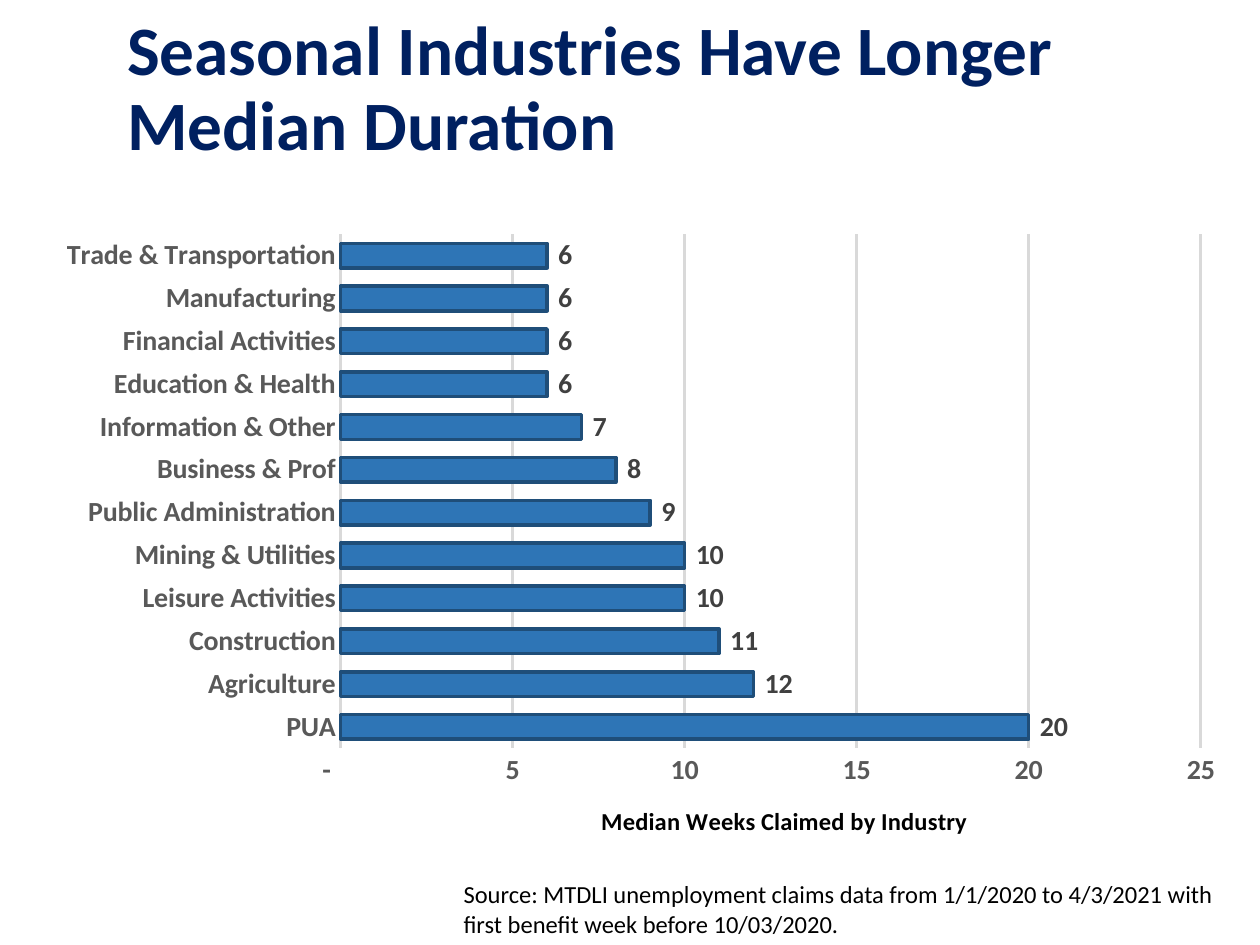
from lxml.etree import SubElement
from pptx import Presentation
from pptx.chart.data import CategoryChartData
from pptx.dml.color import RGBColor
from pptx.enum.chart import XL_CHART_TYPE, XL_LABEL_POSITION, XL_TICK_MARK
from pptx.enum.text import MSO_ANCHOR, PP_ALIGN
from pptx.oxml.ns import qn
from pptx.util import Pt

THEME = {
    "font": "Calibri",
    "title": {"size": 39.6, "color": "002060", "bold": True},
    "source": {"size": 14, "color": "000000", "bold": False},
    "axis": {"size": 16, "color": "595959", "bold": True},
    "axis_title": {"size": 14, "color": "000000", "bold": True},
    "label": {"size": 16, "color": "404040", "bold": True},
    "grid": "D9D9D9",
    "bar": "2E75B6",
    "bar_line": "1F4E79",
}
NUMBER_FORMAT = '_(* #,##0_);_(* \\(#,##0\\);_(* "-"??_);_('
WEEKS = {
    "PUA": 20,
    "Agriculture": 12,
    "Construction": 11,
    "Leisure Activities": 10,
    "Mining & Utilities": 10,
    "Public Administration": 9,
    "Business & Prof": 8,
    "Information & Other": 7,
    "Education & Health": 6,
    "Financial Activities": 6,
    "Manufacturing": 6,
    "Trade & Transportation": 6,
}


def style(font, role):
    look = THEME[role]
    for name, value in {"name": THEME["font"], "size": Pt(look["size"]),
                        "bold": look["bold"]}.items():
        setattr(font, name, value)
    font.color.rgb = RGBColor.from_string(look["color"])


def set_layout(parent, position, values):
    """Fix the place of a chart part, in fractions of the chart."""
    for old in parent.findall(qn("c:layout")):
        parent.remove(old)
    layout = SubElement(parent, qn("c:layout"))
    manual = SubElement(layout, qn("c:manualLayout"))
    for tag, value in values.items():
        SubElement(manual, qn(f"c:{tag}")).set("val", str(value))
    parent.insert(position, layout)


prs = Presentation()
prs.slide_width, prs.slide_height = Pt(720), Pt(540)
s = prs.slides.add_slide(prs.slide_layouts[5])

# Title
title = s.shapes.title
title.left, title.top, title.width, title.height = Pt(65.5), Pt(10.8), Pt(643.7), Pt(82)
tf = title.text_frame
tf.word_wrap = True
tf.vertical_anchor = MSO_ANCHOR.MIDDLE
p = tf.paragraphs[0]
p.alignment = PP_ALIGN.LEFT
p.line_spacing = 0.9
r = p.add_run()
r.text = "Seasonal Industries Have Longer Median Duration"
style(r.font, "title")

# Source note
sp = s.shapes.add_textbox(Pt(257.8), Pt(499), Pt(451.4), Pt(41))
tf = sp.text_frame
tf.word_wrap = True
r = tf.paragraphs[0].add_run()
r.text = ("Source: MTDLI unemployment claims data from 1/1/2020 to 4/3/2021 "
          "with first benefit week before 10/03/2020.")
style(r.font, "source")

# Bar chart
data = CategoryChartData()
data.categories = list(WEEKS)
data.add_series("Series 1", list(WEEKS.values()))
chart = s.shapes.add_chart(XL_CHART_TYPE.BAR_CLUSTERED, Pt(13.7), Pt(121),
                           Pt(696.2), Pt(361.4), data).chart
chart.has_title = False
chart.has_legend = False
chart.font.name = THEME["font"]
chart.font.size = Pt(10)
set_layout(chart.plots[0]._element.getparent(), 0, {
    "layoutTarget": "inner", "xMode": "edge", "yMode": "edge",
    "x": 0.26, "y": 0.036, "w": 0.706, "h": 0.822})

# Bars and their labels
plot = chart.plots[0]
plot.gap_width = 74
plot.vary_by_categories = False
bars = plot.series[0].format
bars.fill.solid()
bars.fill.fore_color.rgb = RGBColor.from_string(THEME["bar"])
bars.line.color.rgb = RGBColor.from_string(THEME["bar_line"])
bars.line.width = Pt(2)
labels = plot.series[0].data_labels
for name, value in {"show_value": True, "number_format": NUMBER_FORMAT,
                    "number_format_is_linked": False,
                    "position": XL_LABEL_POSITION.OUTSIDE_END}.items():
    setattr(labels, name, value)
style(labels.font, "label")

# Axes
cat_axis, val_axis = chart.category_axis, chart.value_axis
for axis in (cat_axis, val_axis):
    axis.major_tick_mark = axis.minor_tick_mark = XL_TICK_MARK.NONE
    style(axis.tick_labels.font, "axis")
val_axis.minimum_scale, val_axis.maximum_scale, val_axis.major_unit = 0, 25, 5
val_axis.tick_labels.number_format = NUMBER_FORMAT
val_axis.tick_labels.number_format_is_linked = False
val_axis.format.line.fill.background()
val_axis.has_major_gridlines = True
for line, width in ((cat_axis.format.line, 0.75),
                    (val_axis.major_gridlines.format.line, 2)):
    line.color.rgb = RGBColor.from_string(THEME["grid"])
    line.width = Pt(width)

# Value axis title
axis_title = val_axis.axis_title
r = axis_title.text_frame.paragraphs[0].add_run()
r.text = "Median Weeks Claimed by Industry"
style(r.font, "axis_title")
set_layout(axis_title._element, 1,
           {"xMode": "edge", "yMode": "edge", "x": 0.47, "y": 0.94})

prs.save("out.pptx")
